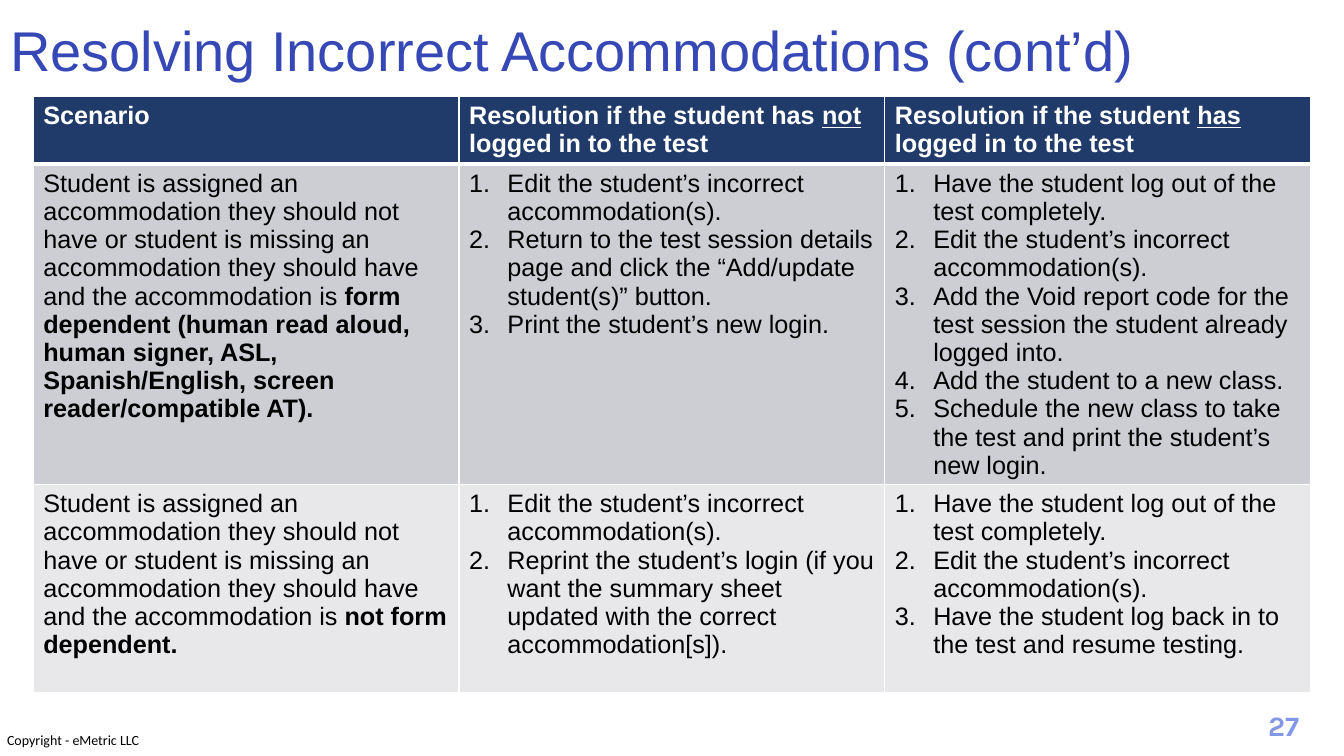
from lxml import etree
from pptx import Presentation
from pptx.dml.color import RGBColor
from pptx.enum.text import MSO_ANCHOR, PP_ALIGN
from pptx.oxml.ns import qn
from pptx.util import Inches, Pt

LEFT, CENTER = PP_ALIGN.LEFT, PP_ALIGN.CENTER
BOTTOM = MSO_ANCHOR.BOTTOM
TITLE_ONLY = 5
COLORS = {
    "title": "3647B6", "header": "203B6A", "form": "CDCED4", "other": "E8E8EB",
    "white": "FFFFFF", "black": "000000", "number": "8397E7",
}
ROW_FILLS = ["header", "form", "other"]
ROW_HEIGHTS = [0.67, 3.17, 2.06]
SCENARIO = ("Student is assigned an accommodation they should not have or student is "
            "missing an accommodation they should have and the accommodation is ")
LOG_OUT = "Have the student log out of the test completely."
EDIT = "Edit the student’s incorrect accommodation(s)."
HEADERS = [
    ("Scenario", "", ""),
    ("Resolution if the student has ", "not", " logged in to the test"),
    ("Resolution if the student ", "has", " logged in to the test"),
]
SCENARIOS = [
    ("form dependent (human read aloud, human signer, ASL, Spanish/English, "
     "screen reader/compatible AT).",
     [EDIT,
      "Return to the test session details page and click the “Add/update student(s)” button.",
      "Print the student’s new login."],
     [LOG_OUT, EDIT,
      "Add the Void report code for the test session the student already logged into.",
      "Add the student to a new class.",
      "Schedule the new class to take the test and print the student’s new login."]),
    ("not form dependent.",
     [EDIT,
      "Reprint the student’s login (if you want the summary sheet updated with "
      "the correct accommodation[s])."],
     [LOG_OUT, EDIT, "Have the student log back in to the test and resume testing."]),
]


def style(font, name, size, color, bold=False):
    """Set the typeface, size, colour and weight of a font."""
    font.name, font.size, font.bold = name, Pt(size), bold
    font.color.rgb = RGBColor.from_string(COLORS[color])


def add_table_run(paragraph, text, color="black", bold=False, underline=False):
    """Append one run of table text."""
    run = paragraph.add_run()
    run.text = text
    style(run.font, "Arial", 18, color, bold)
    run.font.underline = underline


def number_paragraph(paragraph):
    """Give a paragraph automatic numbering with a hanging indent."""
    properties = paragraph._p.get_or_add_pPr()
    properties.set("marL", str(Inches(0.38)))
    properties.set("indent", str(-Inches(0.38)))
    etree.SubElement(properties, qn("a:buFont"), typeface="+mj-lt")
    etree.SubElement(properties, qn("a:buAutoNum"), type="arabicPeriod")


def fill_cell(cell, color, top, bottom):
    """Draw the white borders and the background of a cell."""
    properties = cell._tc.get_or_add_tcPr()
    for side, width in (("L", 1), ("R", 1), ("T", top), ("B", bottom)):
        line = etree.SubElement(properties, qn(f"a:ln{side}"), w=str(Pt(width)))
        solid = etree.SubElement(line, qn("a:solidFill"))
        etree.SubElement(solid, qn("a:srgbClr"), val=COLORS["white"])
    cell.fill.solid()
    cell.fill.fore_color.rgb = RGBColor.from_string(COLORS[color])


def write_steps(cell, steps):
    """Write numbered steps into a cell."""
    cell.text_frame.text = "\n".join(steps)
    for paragraph in cell.text_frame.paragraphs:
        number_paragraph(paragraph)
        style(paragraph.runs[0].font, "Arial", 18, "black")


def add_title(slide, left, top, width, height):
    """Place and format the slide title."""
    title = slide.shapes.title
    title.left, title.top, title.width, title.height = map(Inches, (left, top, width, height))
    title.text_frame.text = "Resolving Incorrect Accommodations (cont’d)"
    title.text_frame.vertical_anchor = BOTTOM
    paragraph = title.text_frame.paragraphs[0]
    paragraph.alignment, paragraph.line_spacing = LEFT, 0.9
    style(paragraph.runs[0].font, "Arial", 40, "title")


def add_resolutions(slide, left, top, width):
    """Build the table of scenarios and their resolutions."""
    box = map(Inches, (left, top, width, sum(ROW_HEIGHTS)))
    table = slide.shapes.add_table(len(ROW_HEIGHTS), len(HEADERS), *box).table
    for row_index, (height, color) in enumerate(zip(ROW_HEIGHTS, ROW_FILLS)):
        table.rows[row_index].height = Inches(height)
        for cell in table.rows[row_index].cells:
            fill_cell(cell, color, 3 if row_index == 1 else 1, 3 if row_index == 0 else 1)
    for cell, (before, stressed, after) in zip(table.rows[0].cells, HEADERS):
        paragraph = cell.text_frame.paragraphs[0]
        for text in filter(None, (before, stressed, after)):
            add_table_run(paragraph, text, "white", True, text == stressed)
    for row_index, (kind, not_logged_in, logged_in) in enumerate(SCENARIOS, 1):
        paragraph = table.cell(row_index, 0).text_frame.paragraphs[0]
        add_table_run(paragraph, SCENARIO)
        add_table_run(paragraph, kind, bold=True)
        write_steps(table.cell(row_index, 1), not_logged_in)
        write_steps(table.cell(row_index, 2), logged_in)


def add_label(slide, box, text, font, alignment=LEFT, inset=None):
    """Add a one-line text box, with its own inset if one is given."""
    frame = slide.shapes.add_textbox(*map(Inches, box)).text_frame
    frame.word_wrap = True
    frame.text = text
    if inset is not None:
        frame.margin_left = frame.margin_right = Inches(inset)
        frame.margin_top = frame.margin_bottom = Inches(inset)
    frame.paragraphs[0].alignment = alignment
    style(frame.paragraphs[0].runs[0].font, *font)


def main():
    """Build and save the presentation."""
    presentation = Presentation()
    presentation.slide_width, presentation.slide_height = Inches(13.33), Inches(7.5)
    slide = presentation.slides.add_slide(presentation.slide_layouts[TITLE_ONLY])
    add_title(slide, 0, 0, 12.02, 0.88)
    add_resolutions(slide, 0.33, 0.96, 12.67)
    add_label(slide, (0.07, 7.26, 1.35, 0.17), "Copyright - eMetric LLC",
              ("Calibri", 10, "black"), inset=0)
    add_label(slide, (12.42, 6.98, 0.62, 0.44), "27", ("Karla", 20, "number", True), CENTER)
    presentation.save("out.pptx")


if __name__ == "__main__":
    main()
